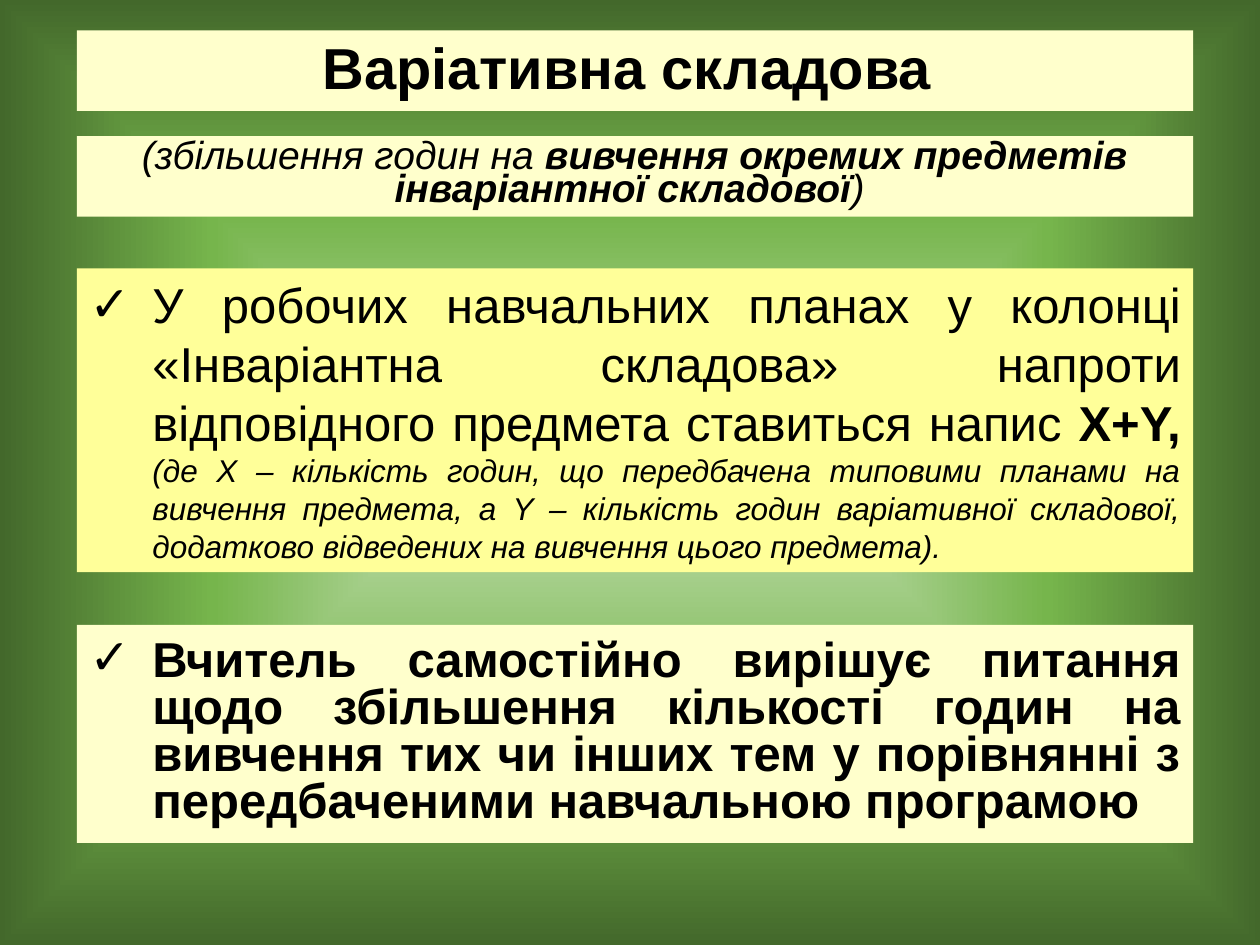
from dataclasses import dataclass

from pptx import Presentation
from pptx.dml.color import RGBColor as RGB
from pptx.enum.text import MSO_ANCHOR as Anchor, MSO_AUTO_SIZE as AutoSize, PP_ALIGN as Align
from pptx.oxml import parse_xml
from pptx.oxml.ns import nsdecls, qn
from pptx.util import Pt


@dataclass(frozen=True)
class Theme:
    font: str = "Arial"
    text: str = "000000"
    pale: str = "FFFFCC"
    yellow: str = "FFFF99"
    glow: tuple = ((0, "C5E0B4"), (55, "76B54C"), (100, "43682B"))
    title: float = 33
    subtitle: float = 22.3
    body: float = 28
    note: float = 18


class Deck:
    left, width, indent = 43.9, 637.9, 36

    def __init__(self, theme):
        self.theme = theme
        self.prs = Presentation()
        self.prs.slide_width, self.prs.slide_height = Pt(720), Pt(540)
        self.s = None

    def add_slide(self):
        self.s = self.prs.slides.add_slide(self.prs.slide_layouts[3])

    def background(self):
        self.s.background.fill.gradient()
        grad = self.s.element.find(".//" + qn("a:gradFill"))
        stops = "".join(
            f'<a:gs pos="{pos * 1000}"><a:srgbClr val="{color}"/></a:gs>'
            for pos, color in self.theme.glow
        )
        grad.getparent().replace(grad, parse_xml(
            f'<a:gradFill {nsdecls("a")} rotWithShape="1"><a:gsLst>{stops}</a:gsLst>'
            '<a:path path="shape"><a:fillToRect l="50000" t="50000" r="50000" b="50000"/>'
            '</a:path></a:gradFill>'
        ))

    def panel(self, sp, top, height, fill, runs, align, spacing, anchor=Anchor.MIDDLE):
        sp.left, sp.top, sp.width, sp.height = map(Pt, (self.left, top, self.width, height))
        sp.fill.solid()
        sp.fill.fore_color.rgb = RGB.from_string(fill)
        tf = sp.text_frame
        tf.word_wrap = True
        tf.auto_size = AutoSize.NONE
        tf.vertical_anchor = anchor
        p = tf.paragraphs[0]
        p.alignment = align
        p.line_spacing = spacing
        p.space_before = Pt(0)
        for text, size, bold, italic in runs:
            r = p.add_run()
            r.text = text
            r.font.name = self.theme.font
            r.font.size = Pt(size)
            r.font.bold = bold
            r.font.italic = italic
            r.font.color.rgb = RGB.from_string(self.theme.text)
        return p

    def title(self, top, height, runs):
        self.panel(self.s.shapes.title, top, height, self.theme.pale, runs, Align.CENTER, 0.9)

    def subtitle(self, top, height, runs):
        sp = self.s.shapes.add_textbox(0, 0, 0, 0)
        self.panel(sp, top, height, self.theme.pale, runs, Align.CENTER, 0.7)

    def checklist(self, idx, top, height, fill, runs, spacing, anchor):
        sp = self.s.placeholders[idx]
        p = self.panel(sp, top, height, fill, runs, Align.JUSTIFY, spacing, anchor)
        pPr = p._p.get_or_add_pPr()
        pPr.set("marL", str(Pt(self.indent)))
        pPr.set("indent", str(-Pt(self.indent)))
        pPr.append(parse_xml(f'<a:buFont {nsdecls("a")} typeface="{self.theme.font}"/>'))
        pPr.append(parse_xml(f'<a:buChar {nsdecls("a")} char="✓"/>'))

    def save(self):
        self.prs.save("out.pptx")


def main():
    t = Theme()
    deck = Deck(t)
    deck.add_slide()
    deck.background()
    deck.title(17.3, 46.1, [("Варіативна складова ", t.title, True, False)])
    deck.subtitle(77.8, 46.1, [
        ("(збільшення годин на ", t.subtitle, False, True),
        ("вивчення окремих предметів інваріантної складової", t.subtitle, True, True),
        (") ", t.subtitle, False, True),
    ])
    deck.checklist(1, 153.4, 173.5, t.yellow, [
        ("У робочих навчальних планах у колонці «Інваріантна складова» "
         "напроти відповідного предмета ставиться напис ", t.body, False, False),
        ("X+Y, ", t.body, True, False),
        ("(де X – кількість годин, що передбачена типовими планами на вивчення предмета, "
         "а Y – кількість годин варіативної складової, додатково відведених "
         "на вивчення цього предмета).", t.note, False, True),
    ], 1.0, Anchor.TOP)
    deck.checklist(2, 357.1, 124.6, t.pale, [
        ("Вчитель самостійно вирішує питання щодо збільшення кількості годин "
         "на вивчення тих чи інших тем у порівнянні з передбаченими "
         "навчальною програмою", t.body, True, False),
    ], 0.8, Anchor.MIDDLE)
    deck.save()


if __name__ == "__main__":
    main()
